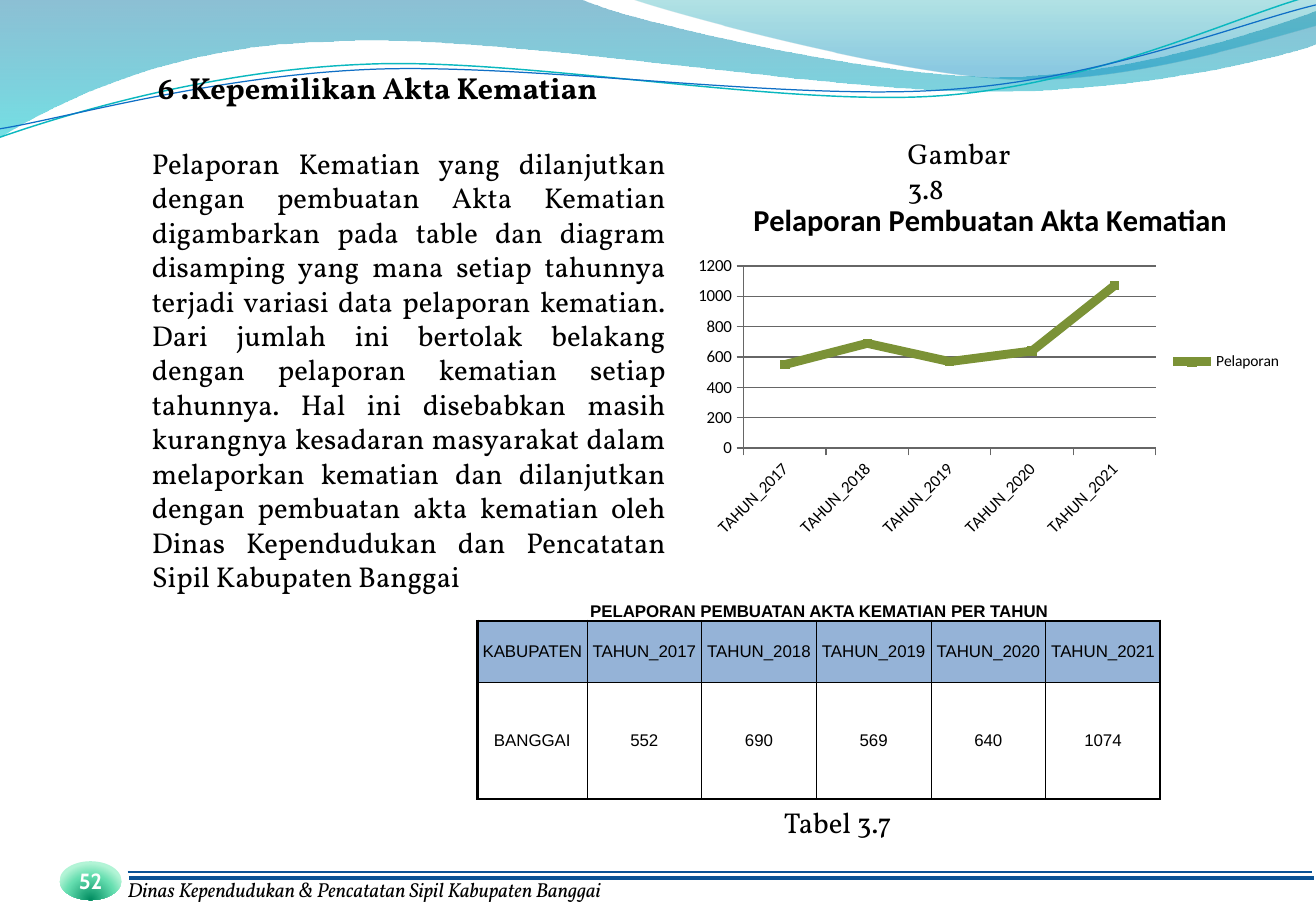
"""Build the slide on death certificate reporting, with its chart and table."""
import pptx
import pptx.chart.data
import pptx.dml.color
import pptx.enum.chart
import pptx.enum.shapes
import pptx.enum.text
import pptx.oxml
import pptx.oxml.ns
import pptx.util

PX = 9144
THEME = {
    "text": "000000", "white": "FFFFFF", "rule": "095295", "header": "95B3D7",
    "series": "7B9236", "grid": "666666", "teal": "0AB8BF", "blue": "0F6FC6",
    "serif": "Vollkorn", "badge": "Cabin", "table": "Arial", "chart": "Calibri",
    "title_size": 18, "body_size": 17, "badge_size": 13, "footer_size": 12,
    "table_size": 10, "axis_size": 10, "legend_size": 9.2, "chart_title_size": 18,
}
COLOR = pptx.dml.color.RGBColor.from_string
ALIGN = pptx.enum.text.PP_ALIGN
ANCHOR = pptx.enum.text.MSO_ANCHOR
NAMESPACE = pptx.oxml.ns.nsdecls("a")


def draw_curve(shapes, pieces, close):
    """Draw straight pieces of one point and cubic pieces of three points."""
    points = [point for piece in pieces for point in zip(piece[::2], piece[1::2])]
    builder = shapes.build_freeform(*points[0], scale=PX)
    builder.add_line_segments(points[1:], close=close)
    shape = builder.convert_to_shape()
    shape.shadow.inherit = False
    segments = iter(shape.element.xpath(".//a:lnTo"))
    for piece in pieces[1:]:
        first = next(segments)
        if len(piece) == 6:
            cubic = pptx.oxml.parse_xml(f"<a:cubicBezTo {NAMESPACE}/>")
            first.addprevious(cubic)
            for segment in (first, next(segments), next(segments)):
                cubic.append(segment[0])
                segment.getparent().remove(segment)
    return shape


def fill_gradient(shape, stops, direction):
    """Fill a shape with colour stops of position, colour and opacity."""
    shape.fill.gradient()
    old = shape.element.spPr.find(pptx.oxml.ns.qn("a:gradFill"))
    marks = "".join(
        f'<a:gs pos="{position * 1000}"><a:srgbClr val="{color}">'
        f'<a:alpha val="{opacity * 1000}"/></a:srgbClr></a:gs>'
        for position, color, opacity in stops
    )
    new = pptx.oxml.parse_xml(
        f'<a:gradFill {NAMESPACE} rotWithShape="1"><a:gsLst>{marks}</a:gsLst>{direction}</a:gradFill>'
    )
    old.getparent().replace(old, new)


deck = pptx.Presentation()
deck.slide_width = 1083 * PX
deck.slide_height = 750 * PX
page = deck.slides.add_slide(deck.slide_layouts[5])
shapes = page.shapes

waves = [
    ([(0, 0), (477, -1), (515, 17, 719, 63, 822, 63), (924, 63, 1038, 26, 1083, 9), (1084, 36),
      (1065, 44, 942, 76, 808, 75), (674, 75, 414, 28, 279, 34), (140, 36, 50, 83, -1, 113)],
     [(0, "0074A1", 45), (100, "00C6CF", 55)]),
    ([(519, -1), (552, 11, 739, 62, 833, 65), (927, 69, 1042, 32, 1083, 21), (1083, 0)],
     [(0, "00A1A9", 30), (80, "008BBF", 45)]),
]
for outline, stops in waves:
    wave = draw_curve(shapes, outline, True)
    wave.line.fill.background()
    fill_gradient(wave, stops, '<a:lin ang="5400000" scaled="0"/>')

strands = [
    ([(0, 113), (52, 95, 171, 58, 300, 53), (428, 47, 642, 88, 772, 79), (902, 70, 1017, 13, 1081, -4)],
     "teal", 0.85),
    ([(0, 106), (51, 98, 177, 62, 307, 57), (436, 52, 647, 83, 776, 74), (906, 66, 1020, 19, 1083, 4)],
     "blue", 0.75),
]
for outline, color, width in strands:
    strand = draw_curve(shapes, outline, False)
    strand.fill.background()
    strand.line.color.rgb = COLOR(THEME[color])
    strand.line.width = pptx.util.Pt(width)

for left, top, width in [(105, 718, 0.75), (106, 723, 2.25)]:
    rule = shapes.add_connector(
        pptx.enum.shapes.MSO_CONNECTOR.STRAIGHT, left * PX, top * PX, (left + 975) * PX, top * PX)
    rule.line.color.rgb = COLOR(THEME["rule"])
    rule.line.width = pptx.util.Pt(width)
    rule.element.spPr.append(pptx.oxml.parse_xml(f"<a:effectLst {NAMESPACE}/>"))

badge = shapes.add_shape(pptx.enum.shapes.MSO_SHAPE.OVAL, 49 * PX, 709 * PX, 51 * PX, 32 * PX)
badge.shadow.inherit = False
badge.line.fill.background()
fill_gradient(
    badge, [(0, "008C60", 100), (68, "65DEB0", 100), (100, "B2F4D6", 100)],
    '<a:path path="circle"><a:fillToRect l="50000" t="130000" r="50000" b="-30000"/></a:path>')

title = shapes.title
title.element.getparent().append(title.element)
title.left, title.top, title.width, title.height = 121 * PX, 53 * PX, 571 * PX, 39 * PX
body, table_caption, chart_caption, footer = [
    shapes.add_textbox(left * PX, top * PX, width * PX, height * PX)
    for left, top, width, height in [
        (116, 115, 441, 381), (636, 658, 108, 37), (738, 107, 135, 37), (96, 718, 450, 29)]
]
BODY = (
    "Pelaporan Kematian yang dilanjutkan dengan pembuatan Akta Kematian digambarkan pada table "
    "dan diagram disamping yang mana setiap tahunnya terjadi variasi data pelaporan kematian. "
    "Dari jumlah ini bertolak belakang dengan pelaporan kematian setiap tahunnya. Hal ini "
    "disebabkan masih kurangnya kesadaran masyarakat dalam melaporkan kematian dan dilanjutkan "
    "dengan pembuatan akta kematian oleh Dinas Kependudukan dan Pencatatan Sipil Kabupaten Banggai"
)
texts = [
    (title, "6 .Kepemilikan Akta Kematian", "title_size", "serif", "text", True, False, ALIGN.LEFT),
    (body, BODY, "body_size", "serif", "text", False, False, ALIGN.JUSTIFY),
    (table_caption, "Tabel 3.7", "body_size", "serif", "text", False, False, ALIGN.LEFT),
    (chart_caption, "Gambar 3.8", "body_size", "serif", "text", False, False, ALIGN.LEFT),
    (footer, "Dinas Kependudukan & Pencatatan Sipil Kabupaten Banggai",
     "footer_size", "serif", "text", False, True, ALIGN.LEFT),
    (badge, "52", "badge_size", "badge", "white", True, False, ALIGN.CENTER),
]
for box, words, size, font, color, bold, italic, align in texts:
    frame = box.text_frame
    frame.text = words
    frame.word_wrap = box is not badge
    frame.auto_size = pptx.enum.text.MSO_AUTO_SIZE.NONE
    frame.vertical_anchor = ANCHOR.MIDDLE if box is badge else ANCHOR.TOP
    frame.margin_left = frame.margin_right = 9 * PX
    frame.margin_top = frame.margin_bottom = (4 if box in (title, footer) else 5) * PX
    para = frame.paragraphs[0]
    para.alignment = align
    para.font.name = THEME[font]
    para.font.size = pptx.util.Pt(THEME[size])
    para.font.color.rgb = COLOR(THEME[color])
    para.font.bold = bold
    para.font.italic = italic

years = [f"TAHUN_{year}" for year in range(2017, 2022)]

data = pptx.chart.data.CategoryChartData(number_format="0")
data.categories = years
data.add_series("Pelaporan", [550, 690, 570, 640, 1070])
chart = shapes.add_chart(
    pptx.enum.chart.XL_CHART_TYPE.LINE_MARKERS, 565 * PX, 148 * PX, 500 * PX, 300 * PX, data).chart
chart.has_title = True
chart.chart_title.text_frame.text = "Pelaporan Pembuatan Akta Kematian"
chart.has_legend = True
chart.legend.position = pptx.enum.chart.XL_LEGEND_POSITION.RIGHT
chart.legend.include_in_layout = False
chart.value_axis.minimum_scale = 0
chart.value_axis.maximum_scale = 1200
chart.value_axis.major_unit = 200
for font, size in [
    (chart.font, "axis_size"), (chart.category_axis.tick_labels.font, "axis_size"),
    (chart.value_axis.tick_labels.font, "axis_size"), (chart.legend.font, "legend_size"),
    (chart.chart_title.text_frame.paragraphs[0].font, "chart_title_size"),
]:
    font.name = THEME["chart"]
    font.size = pptx.util.Pt(THEME[size])
    font.color.rgb = COLOR(THEME["text"])
    font.bold = size == "chart_title_size"
for axis in (chart.category_axis, chart.value_axis):
    axis.major_tick_mark = pptx.enum.chart.XL_TICK_MARK.OUTSIDE
for part in (chart.category_axis, chart.value_axis, chart.value_axis.major_gridlines):
    part.format.line.color.rgb = COLOR(THEME["grid"])
    part.format.line.width = pptx.util.Pt(0.75)
chart.element.xpath(".//c:catAx/c:txPr/a:bodyPr")[0].set("rot", "-2700000")

plot_area = chart.element.xpath(".//c:plotArea")[0]
for layout in plot_area.xpath("./c:layout"):
    plot_area.remove(layout)
plot_area.insert(0, pptx.oxml.parse_xml(
    f'<c:layout {pptx.oxml.ns.nsdecls("c")}><c:manualLayout><c:layoutTarget val="inner"/>'
    f'<c:xMode val="edge"/><c:yMode val="edge"/><c:x val="{47 / 500}"/><c:y val="{71 / 300}"/>'
    f'<c:w val="{339 / 500}"/><c:h val="{150 / 300}"/></c:manualLayout></c:layout>'))

chart.plots[0].vary_by_categories = False
series = chart.plots[0].series[0]
series.smooth = False
series.format.line.color.rgb = COLOR(THEME["series"])
series.format.line.width = pptx.util.Pt(5.25)
series.marker.style = pptx.enum.chart.XL_MARKER_STYLE.SQUARE
series.marker.size = 5
series.marker.format.fill.solid()
series.marker.format.fill.fore_color.rgb = COLOR(THEME["series"])
series.marker.format.line.color.rgb = COLOR(THEME["series"])

rows = [["PELAPORAN PEMBUATAN AKTA KEMATIAN PER TAHUN"] + [""] * 5,
        ["KABUPATEN"] + years, ["BANGGAI", "552", "690", "569", "640", "1074"]]
table = shapes.add_table(3, 6, 393 * PX, 492 * PX, 562 * PX, 166 * PX).table
table.first_row = table.horz_banding = False
for c, column in enumerate(table.columns):
    column.width = (562 - 90) * PX // 5 if c else 90 * PX
for row, height in zip(table.rows, (19, 51, 96)):
    row.height = height * PX
table.cell(0, 0).merge(table.cell(0, 5))
for r, values in enumerate(rows):
    for c, value in enumerate(values):
        cell = table.cell(r, c)
        cell.margin_left = cell.margin_right = cell.margin_top = cell.margin_bottom = 0
        cell.vertical_anchor = ANCHOR.MIDDLE if r else ANCHOR.BOTTOM
        outer = {"L": c == 0, "R": c == 5, "T": r == 1, "B": r != 1}
        for side, heavy in outer.items():
            width = 19050 if heavy else 6350
            paint = f'<a:solidFill><a:srgbClr val="{THEME["text"]}"/></a:solidFill>'
            if r == 0 and side != "B":
                paint = "<a:noFill/>"
            cell._tc.get_or_add_tcPr().append(pptx.oxml.parse_xml(
                f'<a:ln{side} {NAMESPACE} w="{width}">{paint}</a:ln{side}>'))
        if r == 1:
            cell.fill.solid()
            cell.fill.fore_color.rgb = COLOR(THEME["header"])
        else:
            cell.fill.background()
        if cell.is_spanned:
            continue
        para = cell.text_frame.paragraphs[0]
        para.text = value
        para.alignment = ALIGN.CENTER
        para.font.name = THEME["table"]
        para.font.size = pptx.util.Pt(THEME["table_size"])
        para.font.color.rgb = COLOR(THEME["text"])
        para.font.bold = r == 0

deck.save("out.pptx")
